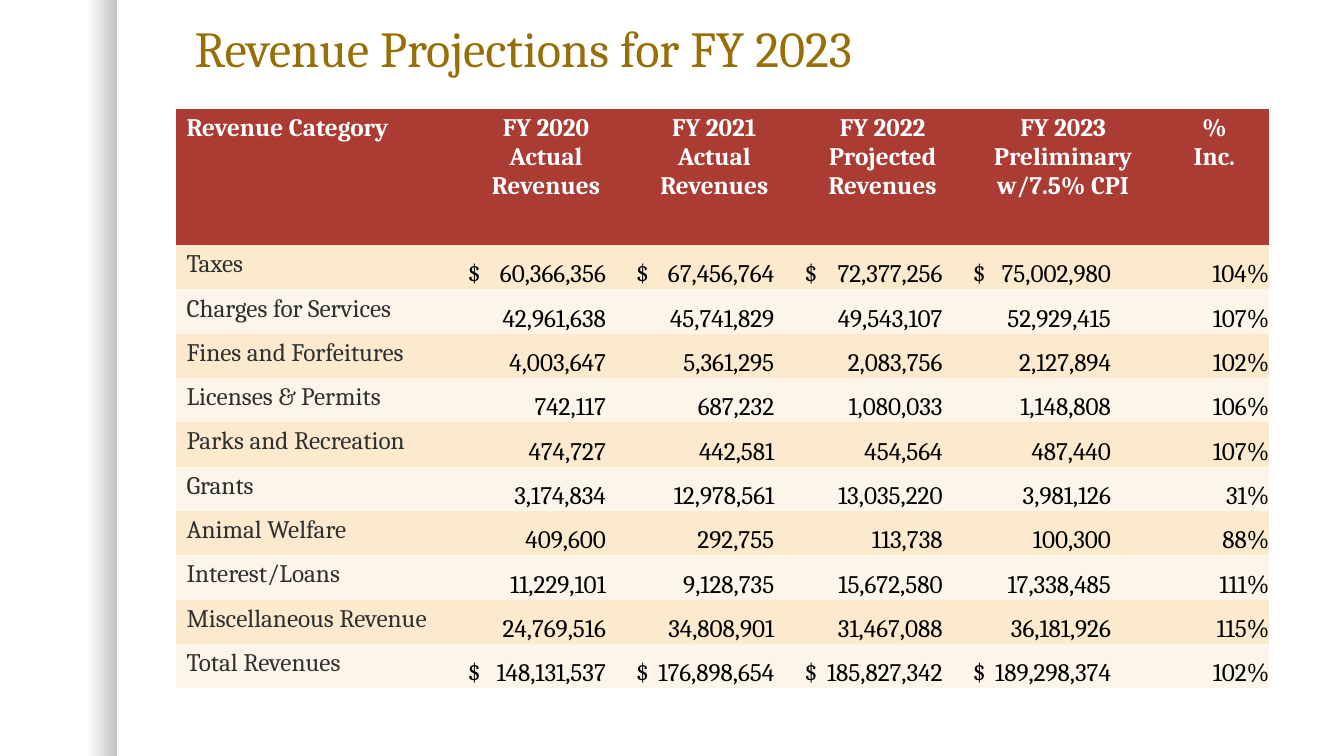
"""Builds the revenue projections slide for FY 2023."""
from dataclasses import dataclass

import lxml.etree
import pptx
import pptx.dml.color
import pptx.enum.shapes
import pptx.enum.text
import pptx.oxml.ns
import pptx.util

INCH = pptx.util.Inches
ALIGN = pptx.enum.text.PP_ALIGN
ANCHOR = pptx.enum.text.MSO_ANCHOR
WIDTH, HEIGHT = 13.33, 7.5
COLUMN_WIDTHS = (2.83, 1.67, 1.67, 1.67, 1.91, 1.09)
HEADER_HEIGHT, ROW_HEIGHT = 1.35, 0.44
DOLLAR_INDENT, AMOUNT_TAB = 0.06, 1.37
PLAIN_TABLE = "{2D5ABB26-0587-4C30-8999-92F81FD0307C}"


@dataclass(frozen=True)
class Theme:
    """Holds the colours, font and type sizes."""
    font: str = "Cambria"
    gold: str = "986F07"
    red: str = "AB3C33"
    white: str = "FFFFFF"
    category: str = "303030"
    black: str = "000000"
    bands: tuple = ("FCEACF", "FDF5E9")
    title_size: int = 36
    table_size: int = 18


THEME = Theme()

HEADINGS = (
    "Revenue Category", "FY 2020 Actual Revenues", "FY 2021 Actual Revenues",
    "FY 2022 Projected Revenues", "FY 2023 Preliminary w/7.5% CPI", "%\nInc.",
)
REVENUES = (
    ("Taxes", 60366356, 67456764, 72377256, 75002980, 104),
    ("Charges for Services", 42961638, 45741829, 49543107, 52929415, 107),
    ("Fines and Forfeitures", 4003647, 5361295, 2083756, 2127894, 102),
    ("Licenses & Permits", 742117, 687232, 1080033, 1148808, 106),
    ("Parks and Recreation", 474727, 442581, 454564, 487440, 107),
    ("Grants", 3174834, 12978561, 13035220, 3981126, 31),
    ("Animal Welfare", 409600, 292755, 113738, 100300, 88),
    ("Interest/Loans", 11229101, 9128735, 15672580, 17338485, 111),
    ("Miscellaneous Revenue", 24769516, 34808901, 31467088, 36181926, 115),
    ("Total Revenues", 148131537, 176898654, 185827342, 189298374, 102),
)


def rgb(value):
    """Turn a hex string into a colour."""
    return pptx.dml.color.RGBColor.from_string(value)


def set_font(paragraph, size, color, bold=False):
    """Format the whole paragraph in the theme font."""
    font = paragraph.font
    font.name, font.size, font.bold = THEME.font, pptx.util.Pt(size), bold
    font.color.rgb = rgb(color)


def add_edge_shade(slide):
    """Draw the soft shade that fades in towards the page edge."""
    shade = slide.shapes.add_shape(
        pptx.enum.shapes.MSO_SHAPE.RECTANGLE, 0, 0, INCH(1.16), INCH(HEIGHT))
    shade.shadow.inherit = False
    shade.line.fill.background()
    shade.fill.gradient()
    shade.fill.gradient_angle = 0
    for stop, position, opacity in zip(shade.fill.gradient_stops, (0.75, 1), (0, 25)):
        stop.position = position
        stop.color.rgb = rgb(THEME.black)
    colors = shade.element.spPr.iter(pptx.oxml.ns.qn("a:srgbClr"))
    for color, opacity in zip(list(colors), (0, 25)):
        lxml.etree.SubElement(
            color, pptx.oxml.ns.qn("a:alpha"), val=str(opacity * 1000))


def set_title(slide, text):
    """Place and format the title."""
    title = slide.shapes.title
    title.left, title.top = INCH(1.83), INCH(0.08)
    title.width, title.height = INCH(10.75), INCH(0.75)
    title.text_frame.text = text
    title.text_frame.vertical_anchor = ANCHOR.BOTTOM
    heading = title.text_frame.paragraphs[0]
    heading.alignment = ALIGN.LEFT
    heading.line_spacing = 0.9
    set_font(heading, THEME.title_size, THEME.gold)


def add_amount_tab(paragraph):
    """Give the paragraph a right tab where the amounts end."""
    properties = paragraph._p.get_or_add_pPr()
    tabs = lxml.etree.SubElement(properties, pptx.oxml.ns.qn("a:tabLst"))
    lxml.etree.SubElement(
        tabs, pptx.oxml.ns.qn("a:tab"), pos=str(INCH(AMOUNT_TAB)), algn="r")


def fill_cell(cell, text, fill, color, align=ALIGN.LEFT, bold=False, tabbed=False):
    """Write one table cell."""
    cell.fill.solid()
    cell.fill.fore_color.rgb = rgb(fill)
    cell.text_frame.text = text
    for paragraph in cell.text_frame.paragraphs:
        paragraph.alignment = align
        if tabbed:
            add_amount_tab(paragraph)
        set_font(paragraph, THEME.table_size, color, bold)


def sit_low(cell, indent=0):
    """Anchor a figure at the bottom of its cell without insets."""
    cell.vertical_anchor = ANCHOR.BOTTOM
    cell.margin_left = INCH(indent)
    cell.margin_right = cell.margin_top = cell.margin_bottom = 0


def fill_revenue_row(cells, revenue, fill, with_dollar):
    """Write a category, its yearly amounts and its percentage."""
    category, *amounts, percent = revenue
    category_cell, *amount_cells, percent_cell = cells
    fill_cell(category_cell, category, fill, THEME.category)
    for cell, amount in zip(amount_cells, amounts):
        sign = "$" if with_dollar else ""
        fill_cell(cell, f"{sign}\t{amount:,}", fill, THEME.black, tabbed=True)
        sit_low(cell, DOLLAR_INDENT)
    fill_cell(percent_cell, f"{percent}%", fill, THEME.black, ALIGN.RIGHT)
    sit_low(percent_cell)


def add_revenue_table(slide):
    """Build the table of revenues by category and year."""
    height = HEADER_HEIGHT + ROW_HEIGHT * len(REVENUES)
    frame = slide.shapes.add_table(
        len(REVENUES) + 1, len(HEADINGS), INCH(1.75), INCH(1.08),
        INCH(sum(COLUMN_WIDTHS)), INCH(height))
    for style in frame.element.iter(pptx.oxml.ns.qn("a:tableStyleId")):
        style.text = PLAIN_TABLE
    table = frame.table
    for column, width in zip(table.columns, COLUMN_WIDTHS):
        column.width = INCH(width)
    header, *rows = table.rows
    header.height = INCH(HEADER_HEIGHT)
    for index, (cell, heading) in enumerate(zip(header.cells, HEADINGS)):
        align = ALIGN.CENTER if index else ALIGN.LEFT
        fill_cell(cell, heading, THEME.red, THEME.white, align, bold=True)
    for index, (row, revenue) in enumerate(zip(rows, REVENUES)):
        row.height = INCH(ROW_HEIGHT)
        with_dollar = index in (0, len(REVENUES) - 1)
        fill_revenue_row(row.cells, revenue, THEME.bands[index % 2], with_dollar)


def main():
    """Build and save the slide."""
    deck = pptx.Presentation()
    deck.slide_width, deck.slide_height = INCH(WIDTH), INCH(HEIGHT)
    slide = deck.slides.add_slide(deck.slide_layouts.get_by_name("Title Only"))
    add_edge_shade(slide)
    set_title(slide, "Revenue Projections for FY 2023")
    add_revenue_table(slide)
    deck.save("out.pptx")


if __name__ == "__main__":
    main()
